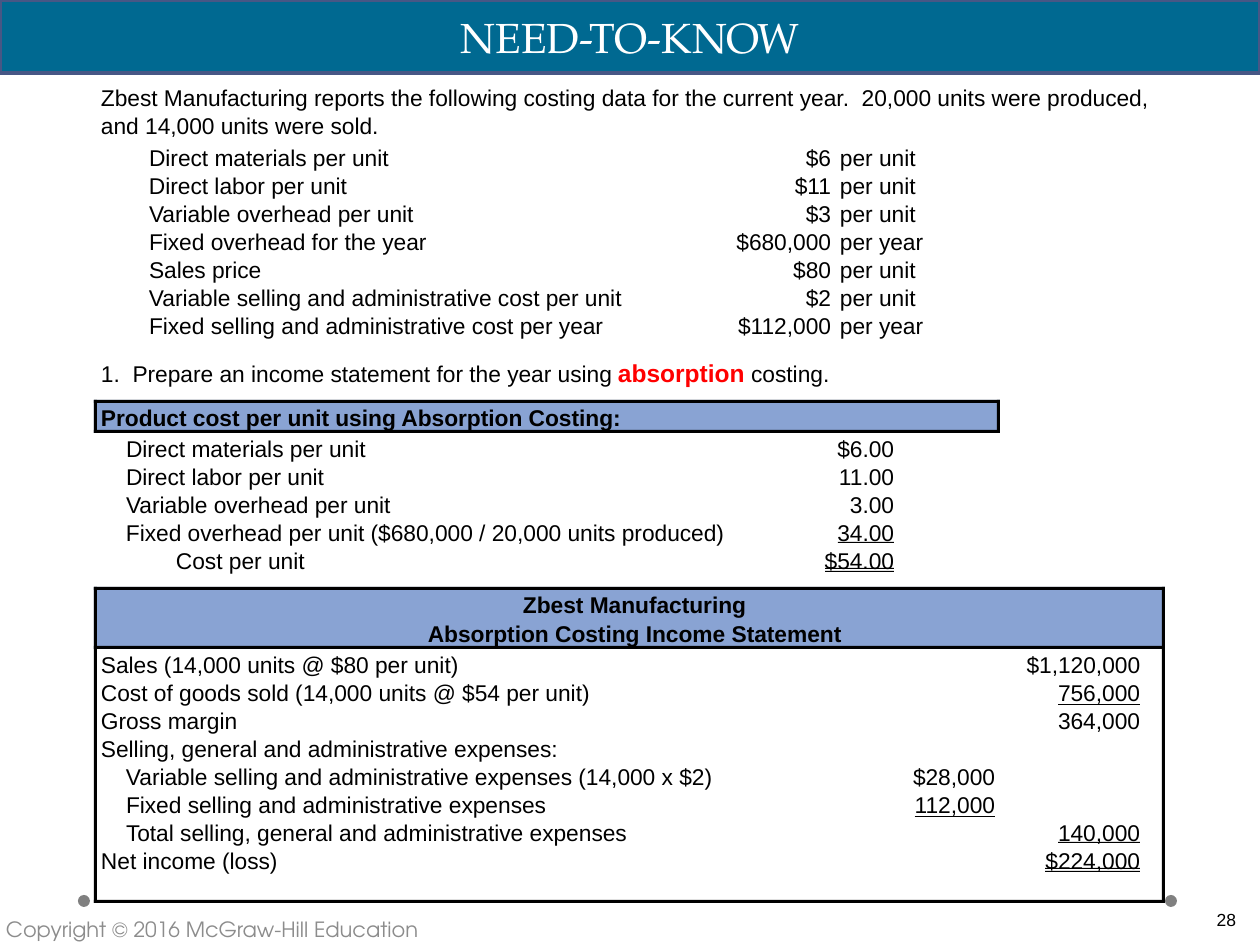
from pptx import Presentation
from pptx.dml.color import RGBColor
from pptx.enum.shapes import MSO_SHAPE
from pptx.enum.text import MSO_ANCHOR, PP_ALIGN
from pptx.util import Emu, Pt

RECT, OVAL = MSO_SHAPE.RECTANGLE, MSO_SHAPE.OVAL
LEFT, CENTER, RIGHT = PP_ALIGN.LEFT, PP_ALIGN.CENTER, PP_ALIGN.RIGHT
TOP, MIDDLE = MSO_ANCHOR.TOP, MSO_ANCHOR.MIDDLE

BLACK = RGBColor(0x00, 0x00, 0x00)
WHITE = RGBColor(0xFF, 0xFF, 0xFF)
RED = RGBColor(0xFF, 0x00, 0x00)
GRAY = RGBColor(0x80, 0x80, 0x80)
LIGHT_GRAY = RGBColor(0x8C, 0x8C, 0x8C)
TEAL = RGBColor(0x00, 0x69, 0x91)
INDIGO = RGBColor(0x47, 0x57, 0x85)
BLUE = RGBColor(0x89, 0xA3, 0xD3)

SCALE = 914400 / 126  # EMU in one px
ROW = 28              # distance between text rows
TEXT_H = 28
RULE = 3              # thickness of the frames

COSTING_DATA = [  # label, label width, amount, basis
    ("Direct materials per unit", 245, "$6", "per unit"),
    ("Direct labor per unit", 203, "$11", "per unit"),
    ("Variable overhead per unit", 270, "$3", "per unit"),
    ("Fixed overhead for the year", 283, "$680,000", "per year"),
    ("Sales price", 120, "$80", "per unit"),
    ("Variable selling and administrative cost per unit", 493, "$2", "per unit"),
    ("Fixed selling and administrative cost per year", 462, "$112,000", "per year"),
]
UNIT_COST = [  # label, indent, label width, amount, rules below
    ("Direct materials per unit", 32, 246, "$6.00", 0),
    ("Direct labor per unit", 32, 206, "11.00", 0),
    ("Variable overhead per unit", 32, 272, "3.00", 0),
    ("Fixed overhead per unit ($680,000 / 20,000 units produced)", 32, 602, "34.00", 1),
    ("Cost per unit", 82, 138, "$54.00", 2),
]
SUB, TOTAL = 901, 1046  # right edges of the statement's amount columns
STATEMENT = [  # label, indent, label width, column, amount, rules, underline
    ("Sales (14,000 units @ $80 per unit)", 7, 363, TOTAL, "$1,120,000", 0, False),
    ("Cost of goods sold (14,000 units @ $54 per unit)", 7, 493, TOTAL, "756,000", 0, True),
    ("Gross margin", 7, 144, TOTAL, "364,000", 0, False),
    ("Selling, general and administrative expenses:", 7, 464, None, "", 0, False),
    ("Variable selling and administrative expenses (14,000 x $2)", 32, 590,
     SUB, "$28,000", 0, False),
    ("Fixed selling and administrative expenses", 32, 425, SUB, "112,000", 0, True),
    ("Total selling, general and administrative expenses", 32, 508, TOTAL, "140,000", 1, False),
    ("Net income (loss)", 7, 183, TOTAL, "$224,000", 2, False),
]


def px(*values):
    return [Emu(round(v * SCALE)) for v in values]


def add_filled(s, box, color, kind=RECT):
    sp = s.shapes.add_shape(kind, *px(*box))
    sp.shadow.inherit = False
    sp.fill.solid()
    sp.fill.fore_color.rgb = color
    sp.line.fill.background()
    return sp


def style_run(r, size=13, color=BLACK, font="Arial", bold=False, underline=False):
    r.font.size, r.font.name = Pt(size), font
    r.font.bold, r.font.underline = bold, underline
    r.font.color.rgb = color


def add_text(s, box, text, align=LEFT, anchor=TOP, margins=(0, 0, 0, 0), **style):
    tf = s.shapes.add_textbox(*px(*box)).text_frame
    tf.margin_left, tf.margin_top, tf.margin_right, tf.margin_bottom = px(*margins)
    tf.word_wrap, tf.vertical_anchor = True, anchor
    tf.text = text
    p = tf.paragraphs[0]
    p.alignment = align
    style_run(p.runs[0], **style)
    return p


def add_amount(s, right, y, text, rules=0, underline=False):
    """Right-aligned figure with drawn rules below it."""
    w = sum(7 if c in ",." else 13 for c in text)
    add_text(s, (right - w, y, w, TEXT_H), text, RIGHT, underline=underline)
    for dy in ((), (23,), (21, 24))[rules]:
        add_filled(s, (right - w + 3, y + dy, w - 3, 1), BLACK)


def add_frame(s, x, y, w, h):
    for bar in ((x, y, w, RULE), (x, y + h - RULE, w, RULE),
                (x, y, RULE, h), (x + w - RULE, y, RULE, h)):
        add_filled(s, bar, BLACK)


def add_title(s, x, y, w, h):
    sp = add_filled(s, (x, y, w, h), TEAL)
    sp.line.color.rgb, sp.line.width = INDIGO, Pt(2.25)
    tf = sp.text_frame
    tf.text, tf.vertical_anchor = "NEED-TO-KNOW", MIDDLE
    tf.paragraphs[0].alignment = CENTER
    style_run(tf.paragraphs[0].runs[0], 24, WHITE, "TeX Gyre Pagella")


def add_costing_data(s, x, y, w):
    p = add_text(s, (x, y, w, 56),
                 "Zbest Manufacturing reports the following costing data for the current year.  "
                 "20,000 units were produced, and 14,000 units were sold.")
    p.line_spacing = Pt(16)
    for i, (label, label_w, amount, basis) in enumerate(COSTING_DATA):
        row_y = y + 61 + i * ROW
        add_text(s, (x + 48, row_y, label_w, TEXT_H), label)
        add_amount(s, x + 730, row_y, amount)
        add_text(s, (x + 739, row_y, 91, TEXT_H), basis)


def add_question(s, x, y, w, h):
    p = add_text(s, (x, y, w, h), "1.  Prepare an income statement for the year using ")
    for text, style in (("absorption", dict(size=14, color=RED, bold=True)),
                        (" costing.", {})):
        r = p.add_run()
        r.text = text
        style_run(r, **style)


def add_unit_cost(s, x, y, w, h):
    add_filled(s, (x, y, w, h), BLUE)
    add_frame(s, x, y, w, h)
    add_text(s, (x + 7, y + 4, 529, TEXT_H),
             "Product cost per unit using Absorption Costing:", bold=True)
    for i, (label, indent, label_w, amount, rules) in enumerate(UNIT_COST):
        row_y = y + 35 + i * ROW
        add_text(s, (x + indent, row_y, label_w, TEXT_H), label)
        add_amount(s, x + 800, row_y, amount, rules)


def add_income_statement(s, x, y, w, h):
    add_filled(s, (x, y, w, 62), BLUE)
    add_frame(s, x, y, w, h)
    add_filled(s, (x, y + 59, w, RULE), BLACK)
    for text, text_w, dy in (("Zbest Manufacturing", 227, 4),
                             ("Absorption Costing Income Statement", 417, 33)):
        add_text(s, (x + (w + 10 - text_w) // 2, y + dy, text_w, TEXT_H),
                 text, CENTER, bold=True)
    for i, (label, indent, label_w, right, amount, rules, line) in enumerate(STATEMENT):
        row_y = y + 64 + i * ROW
        add_text(s, (x + indent, row_y, label_w, TEXT_H), label)
        if amount:
            add_amount(s, x + right, row_y, amount, rules, line)


def add_footer(s, x, y, w, h):
    for dot_x in (x + 78, x + 1165):
        add_filled(s, (dot_x, y, 12, 12), GRAY, OVAL)
    add_text(s, (x, y + h - 32, 504, 32), "Copyright © 2016 McGraw-Hill Education",
             anchor=MIDDLE, margins=(6, 6, 13, 6), size=12, color=LIGHT_GRAY,
             font="TeX Gyre Adventor")
    add_text(s, (x + w - 84, y + 8, 73, 32), "28", RIGHT, margins=(13, 6, 13, 6), size=10)


def main():
    prs = Presentation()
    prs.slide_width, prs.slide_height = px(1260, 945)
    s = prs.slides.add_slide(prs.slide_layouts[6])
    add_footer(s, 0, 895, 1260, 50)
    add_title(s, 0, 0, 1260, 73)
    add_costing_data(s, 101, 83, 1086)
    add_question(s, 101, 358, 738, 30)
    add_unit_cost(s, 94, 400, 906, 33)
    add_income_statement(s, 94, 587, 1071, 316)
    prs.save("out.pptx")


if __name__ == "__main__":
    main()
